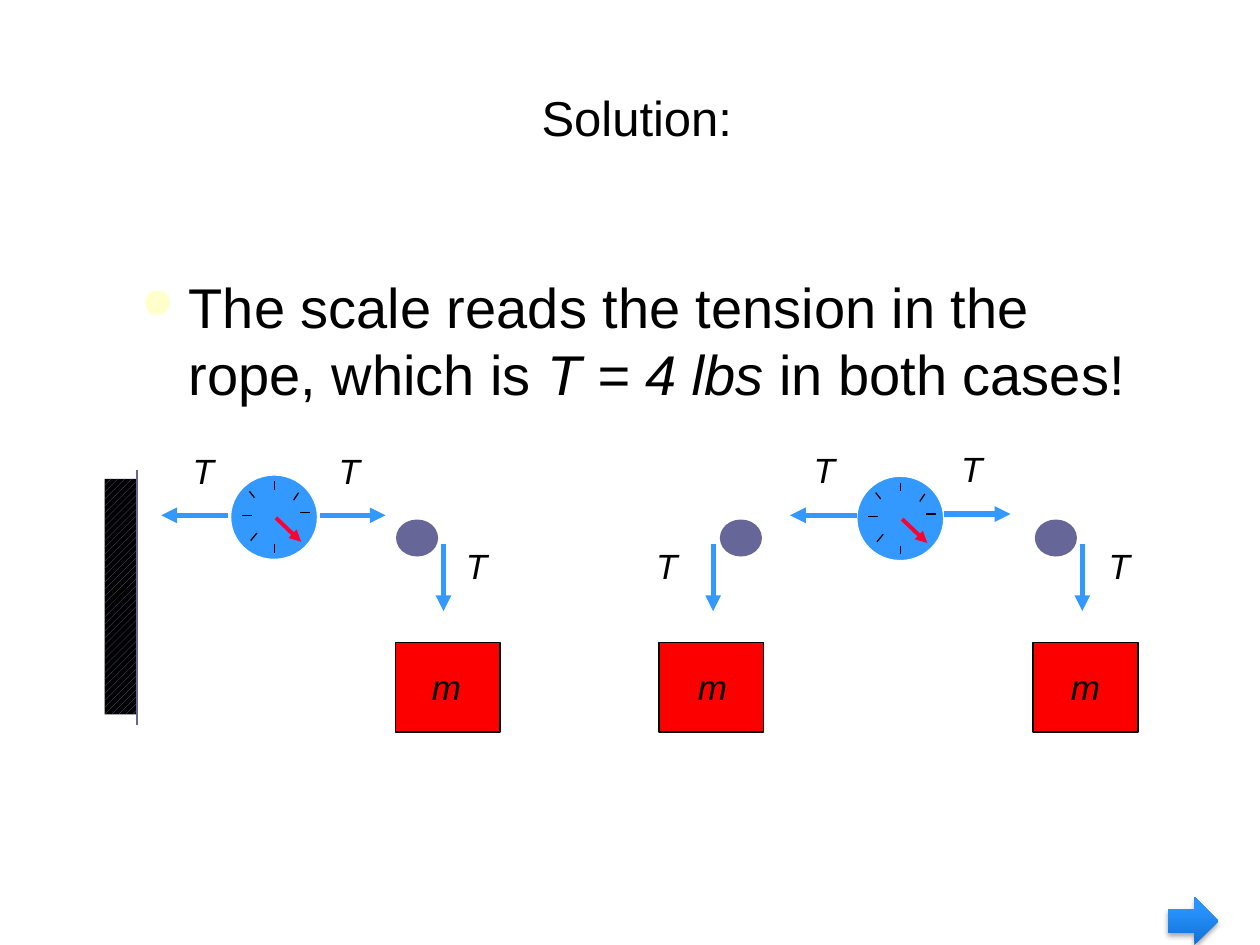
"""Build the solution slide comparing the rope tension in two spring scale set-ups."""
from copy import deepcopy
from dataclasses import dataclass
from math import cos, pi, sin

from lxml.etree import SubElement
from pptx import Presentation
from pptx.dml.color import RGBColor
from pptx.enum.dml import MSO_PATTERN
from pptx.enum.shapes import MSO_CONNECTOR, MSO_SHAPE
from pptx.enum.text import MSO_ANCHOR, MSO_AUTO_SIZE, PP_ALIGN
from pptx.oxml.ns import qn
from pptx.util import Inches, Pt

COLORS = {
    "text": "000000", "bullet": "FFFFCC", "rope": "FFFFFF", "pulley": "666699",
    "weight": "FC0000", "gauge": "3399FF", "force": "3399FF", "needle": "FF0033",
    "button_low": "0F72D5", "button_mid": "2994FF", "button_high": "2B95FF",
}


@dataclass(frozen=True)
class Hanger:
    pulley_x: float
    rope_x: float
    weight_x: float
    mass_x: float
    side: int


@dataclass(frozen=True)
class Force:
    start: tuple[float, float]
    end: tuple[float, float]
    label: tuple[float, float]


HANGERS = (
    Hanger(3.15, 3.52, 3.14, 3.33, 1),
    Hanger(5.72, 5.67, 5.23, 5.44, -1),
    Hanger(8.22, 8.59, 8.2, 8.4, 1),
)
FORCES = (
    Force((1.81, 4.09), (1.28, 4.09), (1.43, 3.56)),
    Force((6.8, 4.09), (6.27, 4.09), (6.36, 3.55)),
    Force((2.54, 4.09), (3.06, 4.09), (2.59, 3.56)),
    Force((7.49, 4.08), (8.02, 4.08), (7.53, 3.54)),
    Force((3.52, 4.32), (3.52, 4.85), (3.6, 4.31)),
    Force((5.66, 4.32), (5.66, 4.85), (5.11, 4.31)),
    Force((8.59, 4.32), (8.59, 4.85), (8.7, 4.31)),
)
GAUGES = ((1.83, 3.77), (6.8, 3.78))
TICKS = (
    (0.35, 0.05, 0.35, 0.12), (0.54, 0.14, 0.5, 0.2), (0.15, 0.13, 0.19, 0.18),
    (0.55, 0.3, 0.63, 0.3), (0.09, 0.32, 0.17, 0.32), (0.35, 0.55, 0.35, 0.62),
    (0.21, 0.46, 0.16, 0.52),
)


def rgb(name: str) -> RGBColor:
    """Return the named colour."""
    return RGBColor.from_string(COLORS[name])


def add_text(shapes, box, runs, *, size, indent=0.0, spacing=None, before=None,
             align=PP_ALIGN.LEFT, anchor=MSO_ANCHOR.TOP, wrap=True, bullet=False):
    """Add a text box from (text, italic) runs."""
    textbox = shapes.add_textbox(*map(Inches, box))
    frame = textbox.text_frame
    frame.word_wrap = wrap
    frame.auto_size = MSO_AUTO_SIZE.NONE if wrap else MSO_AUTO_SIZE.SHAPE_TO_FIT_TEXT
    frame.vertical_anchor = anchor
    paragraph = frame.paragraphs[0]
    paragraph.alignment = align
    if spacing:
        paragraph.line_spacing = spacing
    properties = paragraph._p.get_or_add_pPr()
    properties.set("marL", str(Inches(indent)))
    properties.set("indent", str(-Inches(indent)))
    if before:
        space = SubElement(properties, qn("a:spcBef"))
        SubElement(space, qn("a:spcPct"), val=str(before * 1000))
    if bullet:
        tint = SubElement(properties, qn("a:buClr"))
        SubElement(tint, qn("a:srgbClr"), val=COLORS["bullet"])
        SubElement(properties, qn("a:buSzPct"), val="75000")
        SubElement(properties, qn("a:buChar"), char="●")
    for words, italic in runs:
        run = paragraph.add_run()
        run.text = words
        run.font.name = "Arial"
        run.font.size = Pt(size)
        run.font.italic = italic
        run.font.color.rgb = rgb("text")


def add_symbol(shapes, symbol: str, x: float, y: float, width: float) -> None:
    """Add an italic physics symbol."""
    add_text(shapes, (x, y, width, 0.4), [(symbol, True)], size=20,
             indent=0.31, spacing=0.9, before=30, wrap=False)


def add_line(shapes, start, end, color: str, width: float, arrow=False) -> None:
    """Add a straight line, optionally with an arrowhead at its end."""
    line = shapes.add_connector(MSO_CONNECTOR.STRAIGHT, *map(Inches, (*start, *end)))
    line.line.color.rgb = rgb(color)
    line.line.width = Pt(width)
    if arrow:
        SubElement(line.line._get_or_add_ln(), qn("a:tailEnd"), type="triangle")
    SubElement(line._element.spPr, qn("a:effectLst"))


def add_figure(shapes, kind, box, fill=None, outline=None, width=1.0):
    """Add a flat preset shape."""
    figure = shapes.add_shape(kind, *map(Inches, box))
    figure.shadow.inherit = False
    if fill:
        figure.fill.solid()
        figure.fill.fore_color.rgb = rgb(fill)
    if outline:
        figure.line.color.rgb = rgb(outline)
        figure.line.width = Pt(width)
    else:
        figure.line.fill.background()
    return figure


def add_rope_bend(shapes, hanger: Hanger) -> None:
    """Add the quarter turn of the rope over a pulley."""
    points = [
        (Inches(hanger.rope_x - hanger.side * 0.17 * (1 - sin(step * pi / 16))),
         Inches(4.28 - 0.18 * cos(step * pi / 16)))
        for step in range(9)
    ]
    builder = shapes.build_freeform(*points[0])
    builder.add_line_segments(points[1:], close=False)
    bend = builder.convert_to_shape()
    bend.shadow.inherit = False
    bend.fill.background()
    bend.line.color.rgb = rgb("rope")
    bend.line.width = Pt(3)


def add_hanger(shapes, hanger: Hanger) -> None:
    """Add a pulley with its rope and hanging weight."""
    add_figure(shapes, MSO_SHAPE.OVAL, (hanger.pulley_x, 4.13, 0.32, 0.28), "pulley", "pulley")
    add_line(shapes, (hanger.rope_x, 4.27), (hanger.rope_x, 5.13), "rope", 3)
    add_rope_bend(shapes, hanger)
    add_figure(shapes, MSO_SHAPE.RECTANGLE, (hanger.weight_x, 5.1, 0.83, 0.71), "weight", "text")
    add_symbol(shapes, "m", hanger.mass_x, 5.27, 0.43)


def add_gauge(shapes, left: float, top: float) -> None:
    """Add a round spring scale as a group."""
    parts = shapes.add_group_shape().shapes
    add_figure(parts, MSO_SHAPE.OVAL, (left, top, 0.69, 0.67), "gauge", "rope", 0.75)
    add_line(parts, (left + 0.36, top + 0.34), (left + 0.56, top + 0.53), "needle", 2.25, arrow=True)
    for x1, y1, x2, y2 in TICKS:
        add_line(parts, (left + x1, top + y1), (left + x2, top + y2), "text", 0.75)


def add_wall(shapes) -> None:
    """Add the hatched wall and its face."""
    wall = add_figure(shapes, MSO_SHAPE.RECTANGLE, (0.83, 3.8, 0.25, 1.87))
    wall.fill.patterned()
    wall.fill.pattern = MSO_PATTERN.WIDE_UPWARD_DIAGONAL
    wall.fill.fore_color.rgb = rgb("pulley")
    wall.fill.back_color.rgb = rgb("text")
    add_line(shapes, (1.09, 5.75), (1.09, 3.73), "pulley", 1)


def add_next_button(shapes) -> None:
    """Add the shaded arrow in the corner."""
    button = add_figure(shapes, MSO_SHAPE.RIGHT_ARROW, (9.27, 7.12, 0.4, 0.38))
    button.fill.gradient()
    button.fill.gradient_angle = 90
    stop_list = button._element.spPr.find(qn("a:gradFill")).find(qn("a:gsLst"))
    stop_list.append(deepcopy(stop_list[-1]))
    shades = ((0, "button_low"), (0.8, "button_mid"), (1, "button_high"))
    for stop, (position, shade) in zip(button.fill.gradient_stops, shades):
        stop.position = position
        stop.color.rgb = rgb(shade)
    shadow = SubElement(button._element.spPr.find(qn("a:effectLst")), qn("a:outerShdw"),
                        blurRad=str(Pt(3.1)), dist=str(Pt(1.8)), dir="5400000", rotWithShape="0")
    tint = SubElement(shadow, qn("a:srgbClr"), val=COLORS["text"])
    SubElement(tint, qn("a:alpha"), val="35000")


def main() -> None:
    """Build and save the slide."""
    deck = Presentation()
    deck.slide_width, deck.slide_height = Inches(10), Inches(7.5)
    shapes = deck.slides.add_slide(deck.slide_layouts[6]).shapes
    add_text(shapes, (0.5, 0.3, 9, 1.25), [(" ", True), ("Solution:", False)], size=28,
             align=PP_ALIGN.CENTER, anchor=MSO_ANCHOR.MIDDLE)
    add_text(shapes, (1.02, 2.11, 8.1, 1.29),
             [("The scale reads the tension in the rope, which is ", False),
              ("T = 4 lbs ", True), ("in both cases!", False)],
             size=32, indent=0.38, before=20, bullet=True)
    for start, end in ((3.4, 1.04), (8.47, 5.84)):
        add_line(shapes, (start, 4.09), (end, 4.09), "rope", 3)
    add_wall(shapes)
    for hanger in HANGERS:
        add_hanger(shapes, hanger)
    for left, top in GAUGES:
        add_gauge(shapes, left, top)
    for force in FORCES:
        add_line(shapes, force.start, force.end, "force", 3, arrow=True)
        add_symbol(shapes, "T", *force.label, 0.37)
    add_next_button(shapes)
    deck.save("out.pptx")


if __name__ == "__main__":
    main()
